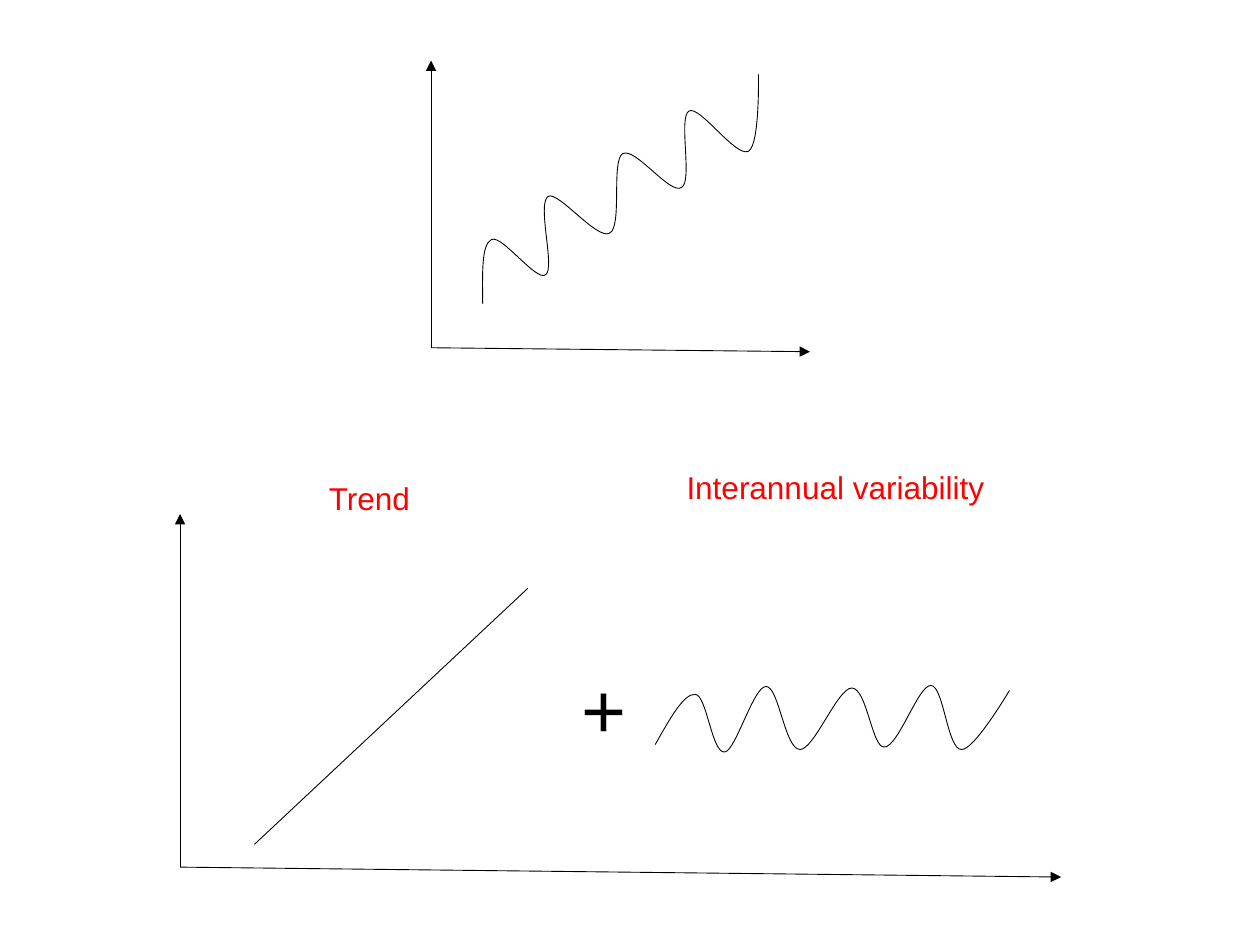
"""Slide splitting a climate series into a trend and interannual variability."""
from lxml import etree
from pptx import Presentation
from pptx import util as u
from pptx.dml.color import RGBColor
from pptx.enum import shapes, text
from pptx.oxml.ns import qn

COLORS = {"ink": "000000", "label": "FF0000"}
FONT = "Arial"

SERIES = [
    (9.73, 6.12),
    (9.73, 5.51), (9.70, 4.93), (9.91, 4.83),
    (10.11, 4.72), (10.82, 5.69), (11.00, 5.54),
    (11.20, 5.41), (10.82, 4.11), (11.05, 3.96),
    (11.25, 3.84), (12.04, 4.85), (12.29, 4.70),
    (12.55, 4.57), (12.32, 3.25), (12.55, 3.10),
    (12.80, 2.95), (13.51, 3.94), (13.74, 3.78),
    (13.97, 3.66), (13.67, 2.36), (13.89, 2.24),
    (14.10, 2.11), (14.83, 3.18), (15.09, 3.05),
    (15.32, 2.92), (15.29, 1.50), (15.29, 1.50),
]
VARIABILITY = [
    (13.21, 15.01),
    (13.51, 14.48), (13.79, 13.97), (14.02, 14.00),
    (14.25, 14.02), (14.35, 15.19), (14.61, 15.16),
    (14.83, 15.14), (15.19, 13.84), (15.44, 13.84),
    (15.70, 13.82), (15.82, 15.11), (16.13, 15.11),
    (16.41, 15.11), (16.89, 13.87), (17.17, 13.87),
    (17.48, 13.87), (17.58, 15.09), (17.83, 15.06),
    (18.11, 15.06), (18.52, 13.79), (18.77, 13.82),
    (19.02, 13.82), (19.10, 15.11), (19.38, 15.11),
    (19.63, 15.14), (20.35, 13.92), (20.35, 13.92),
]
GRAPHS = [
    {"curve": SERIES, "origin": (8.69, 7.01),
     "axis_ends": [(16.33, 7.09), (8.69, 1.22)], "trends": [], "labels": []},
    {"curve": VARIABILITY, "origin": (3.63, 17.48),
     "axis_ends": [(21.39, 17.68), (3.63, 10.36)],
     "trends": [((5.13, 17.02), (10.64, 11.86))],
     "labels": [
         ("+", (11.48, 13.21, 0.64, 2.13), 44, "ink"),
         ("Trend", (6.38, 9.53, 3, 1.02), 18, "label"),
         ("Interannual variability", (13.59, 9.32, 7.8, 1.02), 18, "label"),
     ]},
]


def rgb(name):
    return RGBColor.from_string(COLORS[name])


def cm(values):
    return [u.Cm(v) for v in values]


def style_line(s):
    s.line.color.rgb = rgb("ink")
    s.line.width = u.Pt(0.5)


def add_line(group, start, end, arrow=False):
    s = group.shapes.add_connector(shapes.MSO_CONNECTOR.STRAIGHT, *cm(start), *cm(end))
    style_line(s)
    if arrow:
        etree.SubElement(s.line._get_or_add_ln(), qn("a:tailEnd"), type="triangle")
    etree.SubElement(s._element.spPr, qn("a:effectLst"))


def add_curve(group, points):
    start, *rest = [cm(pt) for pt in points]
    builder = group.shapes.build_freeform(*start, scale=1.0)
    builder.add_line_segments(rest, close=False)
    s = builder.convert_to_shape()
    s.shadow.inherit = False
    s.fill.background()
    style_line(s)
    segments = list(s._element.iter(qn("a:lnTo")))
    for i in range(0, len(segments), 3):
        bezier = etree.SubElement(segments[i].getparent(), qn("a:cubicBezTo"))
        for segment in segments[i:i + 3]:
            bezier.append(segment[0])
            segment.getparent().remove(segment)


def add_label(group, label, box, size, color):
    s = group.shapes.add_textbox(*cm(box))
    tf = s.text_frame
    tf.word_wrap = True
    tf.auto_size = text.MSO_AUTO_SIZE.SHAPE_TO_FIT_TEXT
    tf.text = label
    font = tf.paragraphs[0].runs[0].font
    font.name = FONT
    font.size = u.Pt(size)
    font.color.rgb = rgb(color)


def main():
    prs = Presentation()
    prs.slide_width, prs.slide_height = cm((25.4, 19.05))
    slide = prs.slides.add_slide(prs.slide_layouts[6])
    for graph in GRAPHS:
        group = slide.shapes.add_group_shape()
        for end in graph["axis_ends"]:
            add_line(group, graph["origin"], end, arrow=True)
        for start, end in graph["trends"]:
            add_line(group, start, end)
        add_curve(group, graph["curve"])
        for label in graph["labels"]:
            add_label(group, *label)
    prs.save("out.pptx")


if __name__ == "__main__":
    main()
